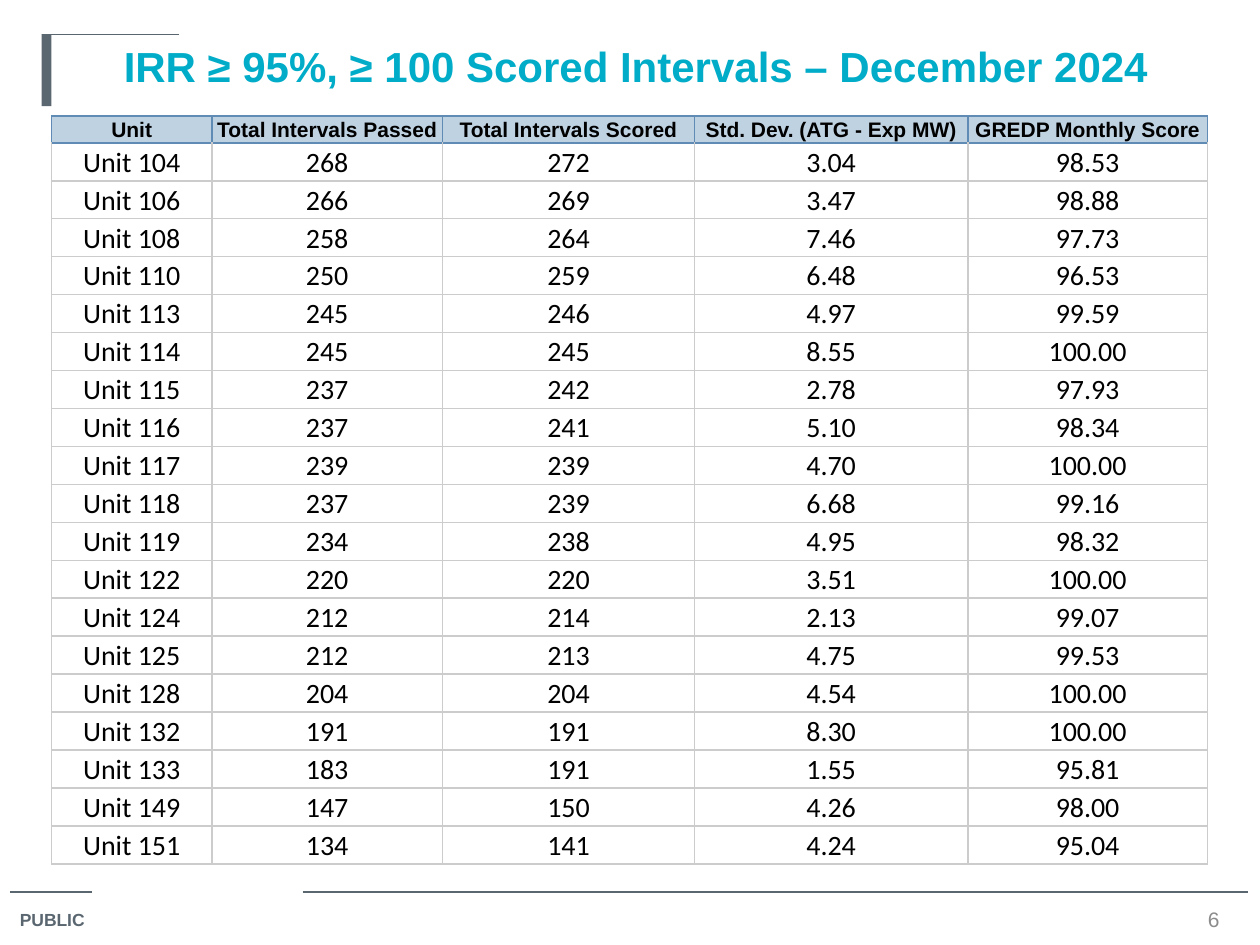
"""Build the December 2024 slide of units that met the scoring threshold."""
import lxml.etree
import pptx
import pptx.dml.color
import pptx.enum.shapes
import pptx.enum.text
import pptx.oxml.ns
import pptx.util

Cm = pptx.util.Cm
Pt = pptx.util.Pt
RGBColor = pptx.dml.color.RGBColor
ALIGN = pptx.enum.text.PP_ALIGN
ANCHOR = pptx.enum.text.MSO_ANCHOR
qn = pptx.oxml.ns.qn

SLATE = RGBColor(0x5B, 0x67, 0x70)
CYAN = RGBColor(0x00, 0xAC, 0xC8)
GRAY = RGBColor(0x8C, 0x8C, 0x8C)
BLACK = RGBColor(0x00, 0x00, 0x00)
HEADER_FILL = RGBColor(0xBF, 0xD2, 0xE2)
HEADER_BORDER = RGBColor(0x60, 0x8B, 0xB4)
BODY_BORDER = RGBColor(0xCC, 0xCC, 0xCC)

TITLE_FONT = {"name": "Arial", "size": Pt(24), "bold": True}
FOOTER_FONT = {"name": "Arial", "size": Pt(10), "bold": True}
NUMBER_FONT = {"name": "Arial", "size": Pt(12), "bold": False}
HEADER_FONT = {"name": "Arial", "size": Pt(12), "bold": True}
BODY_FONT = {"name": "Calibri", "size": Pt(16), "bold": False}
CELL_FORMAT = {
    "vertical_anchor": ANCHOR.MIDDLE,
    "margin_left": Cm(0.03),
    "margin_right": Cm(0.03),
    "margin_top": Cm(0.03),
    "margin_bottom": 0,
}

TEXT_BOXES = [
    ("PUBLIC", (0.15, 18.21, 1.96, 0.71), FOOTER_FONT, SLATE, ALIGN.LEFT, ANCHOR.TOP),
    ("6", (23.93, 18.24, 1.07, 0.58), NUMBER_FONT, GRAY, ALIGN.CENTER, ANCHOR.MIDDLE),
    ("IRR ≥ 95%, ≥ 100 Scored Intervals – December 2024",
     (1.07, 0.69, 23.5, 1.98), TITLE_FONT, CYAN, ALIGN.CENTER, ANCHOR.TOP),
]
RULES = [(0.2, 1.85, 17.98), (6.1, 25.15, 17.98), (0.84, 3.61, 0.69)]
ACCENT_BAR = (0.84, 0.69, 0.2, 1.45)

TABLE_BOX = (1.04, 2.34, 23.3, 15.06)
HEADER_HEIGHT = 0.51
COLUMNS = [
    ("Unit", 3.23),
    ("Total Intervals Passed", 4.65),
    ("Total Intervals Scored", 5.08),
    ("Std. Dev. (ATG - Exp MW)", 5.51),
    ("GREDP Monthly Score", 4.83),
]
UNITS = [
    ("Unit 104", "268", "272", "3.04", "98.53"),
    ("Unit 106", "266", "269", "3.47", "98.88"),
    ("Unit 108", "258", "264", "7.46", "97.73"),
    ("Unit 110", "250", "259", "6.48", "96.53"),
    ("Unit 113", "245", "246", "4.97", "99.59"),
    ("Unit 114", "245", "245", "8.55", "100.00"),
    ("Unit 115", "237", "242", "2.78", "97.93"),
    ("Unit 116", "237", "241", "5.10", "98.34"),
    ("Unit 117", "239", "239", "4.70", "100.00"),
    ("Unit 118", "237", "239", "6.68", "99.16"),
    ("Unit 119", "234", "238", "4.95", "98.32"),
    ("Unit 122", "220", "220", "3.51", "100.00"),
    ("Unit 124", "212", "214", "2.13", "99.07"),
    ("Unit 125", "212", "213", "4.75", "99.53"),
    ("Unit 128", "204", "204", "4.54", "100.00"),
    ("Unit 132", "191", "191", "8.30", "100.00"),
    ("Unit 133", "183", "191", "1.55", "95.81"),
    ("Unit 149", "147", "150", "4.26", "98.00"),
    ("Unit 151", "134", "141", "4.24", "95.04"),
]


def set_attributes(target, values):
    for name, value in values.items():
        setattr(target, name, value)


def write_text(text_frame, text, font, color, alignment):
    paragraph = text_frame.paragraphs[0]
    paragraph.alignment = alignment
    run = paragraph.add_run()
    run.text = text
    set_attributes(run.font, font)
    run.font.color.rgb = color


def add_text_box(slide, text, box, font, color, alignment, anchor):
    shape = slide.shapes.add_textbox(*map(Cm, box))
    set_attributes(shape.text_frame, {"word_wrap": True, "vertical_anchor": anchor})
    write_text(shape.text_frame, text, font, color, alignment)


def add_rule(slide, left, right, top):
    connector = slide.shapes.add_connector(
        pptx.enum.shapes.MSO_CONNECTOR.STRAIGHT, Cm(left), Cm(top), Cm(right), Cm(top))
    connector.line.color.rgb = SLATE
    connector.line.width = Pt(0.75)
    lxml.etree.SubElement(connector._element.spPr, qn("a:effectLst"))


def add_accent_bar(slide):
    shape = slide.shapes.add_shape(
        pptx.enum.shapes.MSO_SHAPE.RECTANGLE, *map(Cm, ACCENT_BAR))
    shape.shadow.inherit = False
    shape.fill.solid()
    shape.fill.fore_color.rgb = SLATE
    shape.line.fill.background()


def set_borders(cell, colors):
    properties = cell._tc.get_or_add_tcPr()
    for position, (side, color) in enumerate(zip("LRTB", colors)):
        line = lxml.etree.Element(qn(f"a:ln{side}"), w=str(Pt(1)))
        fill = lxml.etree.SubElement(line, qn("a:solidFill"))
        lxml.etree.SubElement(fill, qn("a:srgbClr"), val=str(color))
        properties.insert(position, line)


def add_unit_table(slide):
    rows = [[heading for heading, _ in COLUMNS], *UNITS]
    table = slide.shapes.add_table(len(rows), len(COLUMNS), *map(Cm, TABLE_BOX)).table
    set_attributes(table, {"first_row": False, "horz_banding": False})
    for column, (_, width) in zip(table.columns, COLUMNS):
        column.width = Cm(width)
    body_height = (TABLE_BOX[3] - HEADER_HEIGHT) / len(UNITS)
    for row_index, values in enumerate(rows):
        is_header = row_index == 0
        table.rows[row_index].height = Cm(HEADER_HEIGHT if is_header else body_height)
        border = HEADER_BORDER if is_header else BODY_BORDER
        top_border = HEADER_BORDER if row_index <= 1 else BODY_BORDER
        for column_index, value in enumerate(values):
            cell = table.cell(row_index, column_index)
            set_attributes(cell, CELL_FORMAT)
            if is_header:
                cell.fill.solid()
                cell.fill.fore_color.rgb = HEADER_FILL
            else:
                cell.fill.background()
            set_borders(cell, (border, border, top_border, border))
            font = HEADER_FONT if is_header else BODY_FONT
            write_text(cell.text_frame, value, font, BLACK, ALIGN.CENTER)


def main():
    presentation = pptx.Presentation()
    set_attributes(presentation, {"slide_width": Cm(25.4), "slide_height": Cm(19.05)})
    slide = presentation.slides.add_slide(presentation.slide_layouts[6])
    for rule in RULES:
        add_rule(slide, *rule)
    add_accent_bar(slide)
    for text_box in TEXT_BOXES:
        add_text_box(slide, *text_box)
    add_unit_table(slide)
    presentation.save("out.pptx")


if __name__ == "__main__":
    main()
